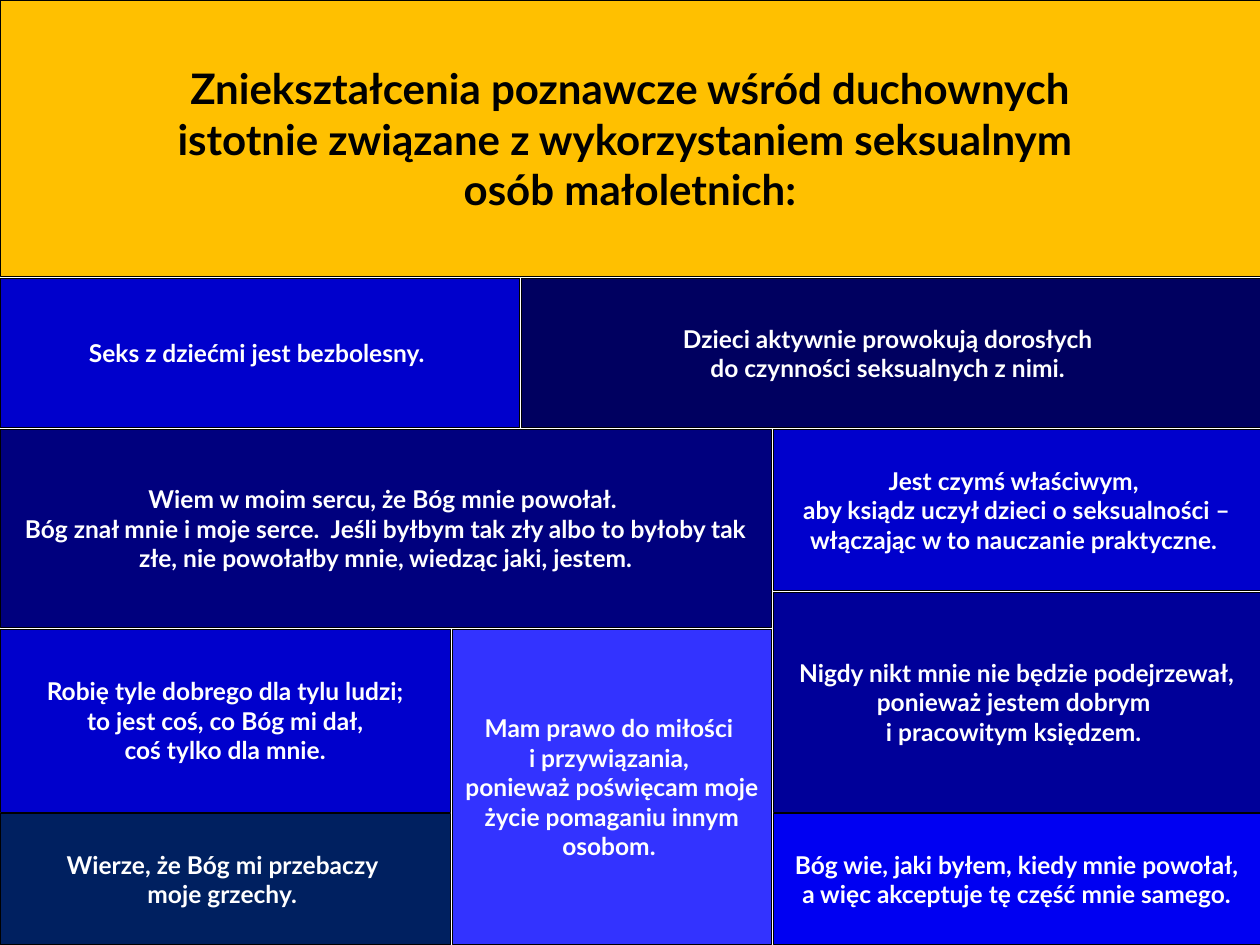
"""Build a slide that tiles quoted beliefs beneath a title banner."""
from dataclasses import dataclass

from pptx import Presentation
from pptx.dml.color import RGBColor
from pptx.enum import shapes, text
from pptx.shapes.autoshape import Shape
from pptx.slide import Slide
from pptx.util import Pt

FONT = "Lato"
BLACK = RGBColor(0x00, 0x00, 0x00)
WHITE = RGBColor(0xFF, 0xFF, 0xFF)
AMBER = RGBColor(0xFF, 0xC0, 0x00)
BLUE = RGBColor(0x00, 0x00, 0xCC)
BRIGHT = RGBColor(0x00, 0x00, 0xF2)
VIOLET = RGBColor(0x33, 0x33, 0xFF)
DEEP = RGBColor(0x00, 0x00, 0x99)
NAVY = RGBColor(0x00, 0x00, 0x7E)
MIDNIGHT = RGBColor(0x00, 0x00, 0x60)
SLATE = RGBColor(0x00, 0x20, 0x60)

WIDTH, HEIGHT, GAP = 720, 540, 1
COL_A, COL_B, COL_C = 258.5, 298, 442
ROW_A, ROW_B, ROW_C, ROW_D, ROW_E = 159, 245.5, 338.5, 359.5, 465

TITLE = (
    "Zniekształcenia poznawcze wśród duchownych\n"
    "istotnie związane z wykorzystaniem seksualnym \n"
    "osób małoletnich:"
)


@dataclass(frozen=True)
class Tile:
    """Grid lines bounding a tile, with its fill, wording and text style."""

    left: float
    top: float
    right: float
    bottom: float
    fill: RGBColor
    wording: str
    color: RGBColor = WHITE
    size: float = 14


BANNER = Tile(0, 0, WIDTH, ROW_A, AMBER, TITLE, BLACK, 24)
BELIEFS = [
    Tile(0, ROW_A, COL_B, ROW_B, BLUE, "Seks z dziećmi jest bezbolesny. "),
    Tile(COL_B, ROW_A, WIDTH, ROW_B, MIDNIGHT,
         "Dzieci aktywnie prowokują dorosłych \ndo czynności seksualnych z nimi. "),
    Tile(0, ROW_B, COL_C, ROW_D, NAVY,
         "Wiem w moim sercu, że Bóg mnie powołał. \n"
         "Bóg znał mnie i moje serce.  Jeśli byłbym tak zły albo to byłoby tak złe, "
         "nie powołałby mnie, wiedząc jaki, jestem."),
    Tile(0, ROW_D, COL_A, ROW_E, BLUE,
         "Robię tyle dobrego dla tylu ludzi;\nto jest coś, co Bóg mi dał,\n"
         "coś tylko dla mnie."),
    Tile(COL_C, ROW_B, WIDTH, ROW_C, BLUE,
         "Jest czymś właściwym, \naby ksiądz uczył dzieci o seksualności – "
         "włączając w to nauczanie praktyczne. "),
    Tile(COL_C, ROW_C, WIDTH, ROW_E, DEEP,
         "Nigdy nikt mnie nie będzie podejrzewał,\nponieważ jestem dobrym \n"
         "i pracowitym księdzem. "),
    Tile(COL_A, ROW_D, COL_C, HEIGHT, VIOLET,
         "Mam prawo do miłości \ni przywiązania, \n"
         "ponieważ poświęcam moje życie pomaganiu innym osobom. "),
    Tile(0, ROW_E, COL_A, HEIGHT, SLATE,
         "Wierze, że Bóg mi przebaczy \nmoje grzechy. "),
    Tile(COL_C, ROW_E, WIDTH, HEIGHT, BRIGHT,
         "Bóg wie, jaki byłem, kiedy mnie powołał,\n"
         "a więc akceptuje tę część mnie samego."),
]


def span_of(start: float, end: float, limit: float) -> Pt:
    """Return the length between two grid lines, less the gap inside the page."""
    return Pt(end - start - (GAP if end < limit else 0))


def format_tile(box: Shape, tile: Tile) -> None:
    """Place, colour and letter a shape as its tile describes."""
    box.left, box.top = Pt(tile.left), Pt(tile.top)
    box.width = span_of(tile.left, tile.right, WIDTH)
    box.height = span_of(tile.top, tile.bottom, HEIGHT)
    box.fill.solid()
    box.fill.fore_color.rgb = tile.fill
    box.line.color.rgb = BLACK
    box.line.width = Pt(0.5)
    frame = box.text_frame
    frame.word_wrap = True
    frame.auto_size = text.MSO_AUTO_SIZE.NONE
    frame.vertical_anchor = text.MSO_ANCHOR.MIDDLE
    para = frame.paragraphs[0]
    para.text = tile.wording
    para.alignment = text.PP_ALIGN.CENTER
    para.font.name = FONT
    para.font.size = Pt(tile.size)
    para.font.bold = True
    para.font.color.rgb = tile.color


def add_tile(page: Slide, tile: Tile) -> None:
    """Add a rectangle for one belief."""
    box = page.shapes.add_shape(shapes.MSO_SHAPE.RECTANGLE, 0, 0, 0, 0)
    box.shadow.inherit = False
    format_tile(box, tile)


def main() -> None:
    """Assemble and save the deck."""
    deck = Presentation()
    deck.slide_width, deck.slide_height = Pt(WIDTH), Pt(HEIGHT)
    page = deck.slides.add_slide(deck.slide_layouts.get_by_name("Title Only"))
    format_tile(page.shapes.title, BANNER)
    for tile in BELIEFS:
        add_tile(page, tile)
    deck.save("out.pptx")


if __name__ == "__main__":
    main()
